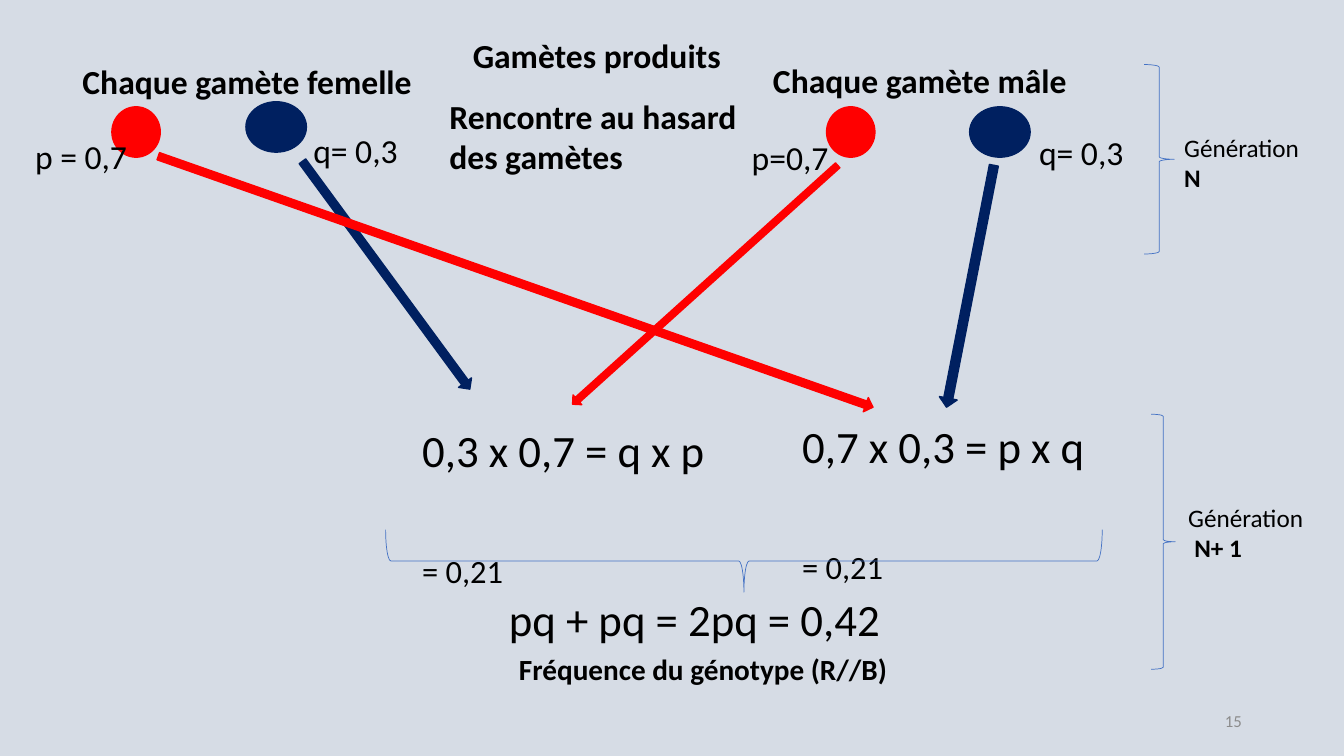
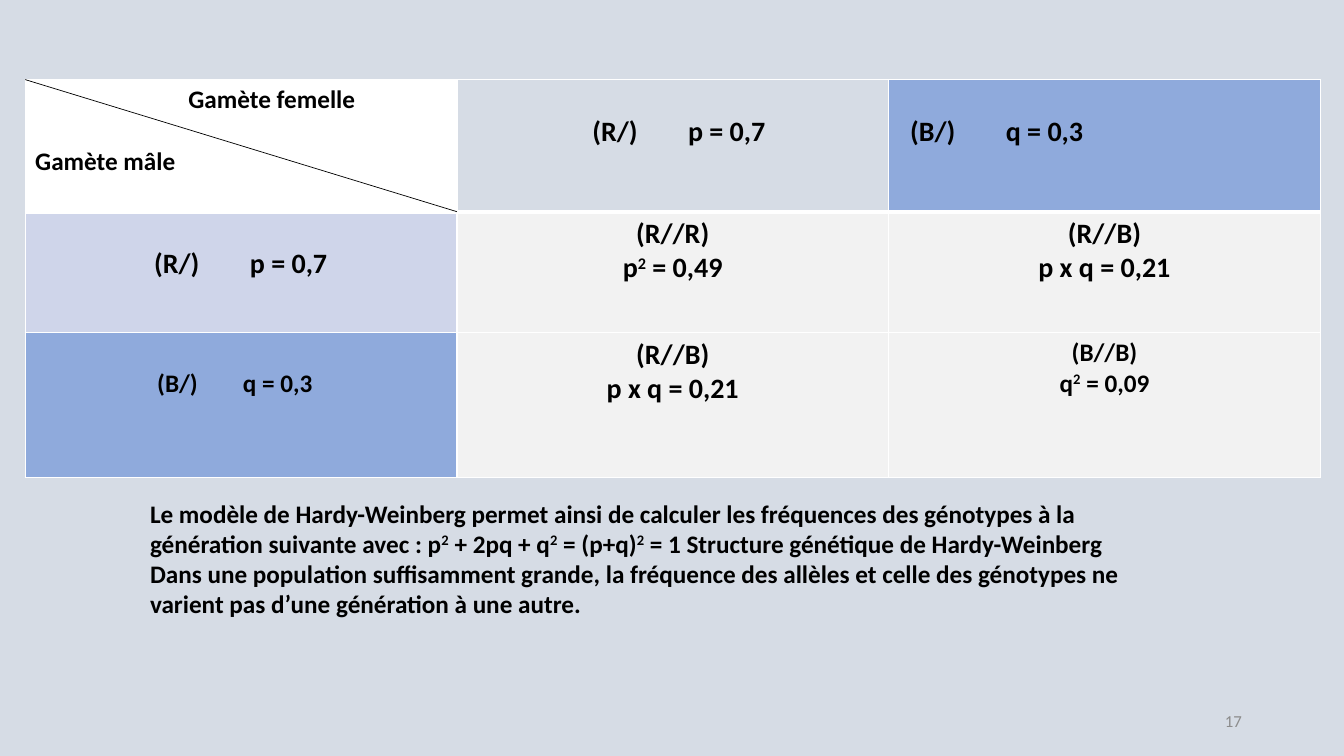
from dataclasses import dataclass
from math import atan2, degrees, hypot

from lxml.etree import SubElement
from pptx import Presentation
from pptx.dml.color import RGBColor
from pptx.enum.shapes import MSO_CONNECTOR as Connector, MSO_SHAPE as Shape
from pptx.enum.text import MSO_ANCHOR as Anchor, MSO_AUTO_SIZE as AutoSize, PP_ALIGN as Align
from pptx.oxml.ns import qn
from pptx.util import Inches, Pt

# The grid: square cells, six to the inch
COLS, ROWS = 80, 45
FONT = "Calibri"
BLACK, WHITE, GREY = "000000", "FFFFFF", "8C8C8C"
RED, NAVY, BLUE = "FF0000", "002060", "4472C4"
BACKGROUND, SKY, LILAC, PALE = "D6DCE5", "8FAADC", "CFD5EA", "F2F2F2"


def grid(cells):
    return Inches(cells / 6)


def color(hex_code):
    return RGBColor.from_string(hex_code)


@dataclass
class Run:
    text: str
    size: float = None
    bold: bool = None
    raised: bool = False


@dataclass
class Para:
    runs: list
    align: Align = Align.LEFT
    gap: float = 0      # points above
    indent: float = 0   # grid columns
    tab: float = 0      # grid columns


def line(text, size=None, bold=None, **layout):
    """A paragraph; text between bars is superscript."""
    return Para([Run(part, size, bold, raised=bool(i % 2))
                 for i, part in enumerate(text.split("|"))], **layout)


def centered(*texts):
    return [line(text, align=Align.CENTER) for text in texts]


class Deck:
    """The shared style and the slide being built."""

    def __init__(self):
        self.prs = Presentation()
        self.prs.slide_width, self.prs.slide_height = grid(COLS), grid(ROWS)
        backdrop = self.prs.slide_master.background.fill
        backdrop.solid()
        backdrop.fore_color.rgb = color(BACKGROUND)
        self.slide = None

    def new_slide(self, number, title=None, box=None):
        layout = self.prs.slide_layouts[5 if title else 6]
        self.slide = self.prs.slides.add_slide(layout)
        if title:
            heading = self.slide.shapes.title
            heading.left, heading.top, heading.width, heading.height = map(grid, box)
            self.fill_frame(heading.text_frame, [line(title)], 24, True)
        self.text((56.52, 41.7, 18, 2.4), [line(number, align=Align.RIGHT)], 12,
                  ink=GREY, anchor=Anchor.MIDDLE)

    def add_paras(self, frame, paras, size, bold, ink=BLACK):
        for i, para in enumerate(paras):
            target = frame.paragraphs[0] if i == 0 else frame.add_paragraph()
            target.alignment = para.align
            target.space_before = Pt(para.gap)
            props = target._p.get_or_add_pPr()
            if para.indent:
                props.set("marL", str(grid(para.indent)))
            if para.tab:
                stops = SubElement(props, qn("a:tabLst"))
                SubElement(stops, qn("a:tab"), pos=str(grid(para.tab)), algn="l")
            for piece in para.runs:
                run = target.add_run()
                run.text = piece.text
                font = run.font
                font.name, font.size = FONT, Pt(piece.size or size)
                font.bold = bold if piece.bold is None else piece.bold
                font.color.rgb = color(ink)
                if piece.raised:
                    run._r.get_or_add_rPr().set("baseline", "30000")

    def fill_frame(self, frame, paras, size, bold=False, ink=BLACK, anchor=Anchor.TOP):
        frame.word_wrap = True
        frame.auto_size = AutoSize.SHAPE_TO_FIT_TEXT
        frame.vertical_anchor = anchor
        self.add_paras(frame, paras, size, bold, ink)

    def text(self, box, paras, size, bold=False, ink=BLACK, anchor=Anchor.TOP):
        frame = self.slide.shapes.add_textbox(*map(grid, box)).text_frame
        self.fill_frame(frame, paras, size, bold, ink, anchor)

    def shape(self, kind, box, fill=None, outline=None, width=1, turn=0):
        shape = self.slide.shapes.add_shape(kind, *map(grid, box))
        shape.shadow.inherit = False
        shape.rotation = turn
        if fill:
            shape.fill.solid()
            shape.fill.fore_color.rgb = color(fill)
        else:
            shape.fill.background()
        shape.line.color.rgb = color(outline or fill)
        shape.line.width = Pt(width)

    def gamete(self, box, fill):
        self.shape(Shape.OVAL, box, fill)

    def brace(self, box, turn=0):
        self.shape(Shape.RIGHT_BRACE, box, outline=BLUE, width=0.5, turn=turn)

    def arrow(self, start, end, thickness, fill):
        (x1, y1), (x2, y2) = start, end
        length = hypot(x2 - x1, y2 - y1)
        box = ((x1 + x2 - length) / 2, (y1 + y2 - thickness) / 2, length, thickness)
        self.shape(Shape.RIGHT_ARROW, box, fill, turn=degrees(atan2(y2 - y1, x2 - x1)))

    def rule(self, start, end):
        rule = self.slide.shapes.add_connector(Connector.STRAIGHT, *map(grid, start + end))
        rule.line.color.rgb = color(BLACK)
        rule.line.width = Pt(0.5)
        SubElement(rule._element.spPr, qn("a:effectLst"))

    def table(self, left, top, col_width, heights, rows):
        """Each cell is (paragraphs, size, fill, left margin, top margin)."""
        count = len(rows[0])
        table = self.slide.shapes.add_table(
            len(rows), count, grid(left), grid(top),
            grid(col_width * count), grid(sum(heights))).table
        table.first_row = table.horz_banding = False
        for column in table.columns:
            column.width = grid(col_width)
        for r, row in enumerate(rows):
            table.rows[r].height = grid(heights[r])
            for c, (paras, size, fill, margin_left, margin_top) in enumerate(row):
                cell = table.cell(r, c)
                self.borders(cell, top=3 if r == 1 else 1, bottom=3 if r == 0 else 1)
                cell.fill.solid()
                cell.fill.fore_color.rgb = color(fill)
                cell.margin_left, cell.margin_top = grid(margin_left), grid(margin_top)
                self.add_paras(cell.text_frame, paras, size, True)

    def borders(self, cell, top, bottom):
        props = cell._tc.get_or_add_tcPr()
        for side, width in zip("LRTB", (1, 1, top, bottom)):
            edge = SubElement(props, qn(f"a:ln{side}"), w=str(Pt(width)))
            paint = SubElement(edge, qn("a:solidFill"))
            SubElement(paint, qn("a:srgbClr"), val=WHITE)


def random_mating(deck):
    deck.new_slide("15", "Gamètes produits", (27.54, 1.8, 20.28, 3))

    # Gametes of each sex
    deck.text((4.32, 3.36, 24.24, 3), [line("Chaque gamète femelle")], 24, True)
    deck.text((45.42, 3.3, 29.52, 3), [line("Chaque gamète mâle")], 24, True)
    for x in (6.66, 49.2):
        deck.gamete((x, 6.36, 2.88, 3), RED)
    for x, y in ((14.64, 6.06), (57.72, 6.36)):
        deck.gamete((x, y, 3.6, 3), NAVY)
    for x, y, frequency in ((1.5, 7.8, "p = 0,7"), (18.06, 7.44, "q= 0,3"),
                            (44.16, 7.86, "p=0,7"), (61.26, 7.56, "q= 0,3")):
        deck.text((x, y, 7.2, 3), [line(frequency)], 24)
    deck.text((26.16, 5.4, 19.2, 5.46),
              [line("Rencontre au hasard"), line("des gamètes")], 24, True)

    # Generations
    deck.brace((68.1, 3.84, 1.8, 11.28))
    deck.text((69.9, 7.56, 8.58, 4.26), [line("Génération"), line("N", bold=True)], 18)
    deck.brace((68.52, 24.66, 1.44, 15.18))
    deck.text((70.14, 29.58, 9.84, 4.26),
              [line("Génération"), line("N+ 1", bold=True, indent=0.36)], 18)

    # Crossings
    deck.arrow((49.86, 9.84), (34.08, 24.06), 0.78, RED)
    deck.arrow((18, 9.6), (27.96, 23.16), 0.96, NAVY)
    deck.arrow((9.42, 9.3), (51.96, 24.24), 0.9, RED)
    deck.arrow((59.16, 9.84), (56.34, 24.24), 1.08, NAVY)

    # Products and their sum
    for x, y, product in ((24.54, 24.84, "0,3 x 0,7 = q x p"),
                          (47.16, 24.6, "0,7 x 0,3 = p x q")):
        deck.text((x, y, 18.48, 9.24),
                  [line(product), Para([Run("= 0,21", 40, raised=True)], gap=49)], 32)
    deck.brace((42.42, 12.06, 3.72, 42.66), turn=90)
    genotype = Run("Fréquence du génotype (R//B)", 36, True, raised=True)
    deck.text((29.7, 34.92, 28.92, 7.08),
              [line("pq + pq = 2pq = 0,42"), Para([genotype], indent=0.6)], 32)


def crossing_table(deck):
    deck.new_slide("17")

    # Crossing table
    left, top, col_width, heights = 1.5, 4.74, 25.7, (7.86, 7.2, 8.64)
    side, above, lowered = 0.6, 0.3, 2.12
    red, blue = "(R/)\tp = 0,7", "(B/)\tq = 0,3"
    corner = [line("Gamète femelle", indent=9.12), line("Gamète mâle", gap=22)]
    mixed = (centered("(R//B)", "p x q = 0,21"), 20, PALE, side, above)
    deck.table(left, top, col_width, heights, [
        [(corner, 18, WHITE, side, above),
         ([line(red, tab=5.7)], 20, BACKGROUND, 8.06, lowered),
         ([line(blue, tab=5.7)], 20, SKY, 1.28, lowered)],
        [([line(red, tab=5.7)], 20, LILAC, 7.68, lowered),
         (centered("(R//R)", "p|2| = 0,49"), 20, PALE, side, above),
         mixed],
        [([line(blue, tab=5.1)], 18, SKY, 7.86, lowered),
         mixed,
         (centered("(B//B)", "q|2| = 0,09"), 18, PALE, side, above)],
    ])
    deck.rule((left, top), (left + col_width, top + heights[0]))

    # Conclusion
    deck.text((8.34, 29.34, 63.36, 9.72), [
        line("Le modèle de Hardy-Weinberg permet ainsi de calculer les fréquences des "
             "génotypes à la génération suivante avec : p|2| + 2pq + q|2| = (p+q)|2| = 1 "
             "Structure génétique de Hardy-Weinberg"),
        line("Dans une population suffisamment grande, la fréquence des allèles et celle "
             "des génotypes ne varient pas d’une génération à une autre."),
    ], 18, True)


def main():
    deck = Deck()
    random_mating(deck)
    crossing_table(deck)
    deck.prs.save("out.pptx")


if __name__ == "__main__":
    main()
